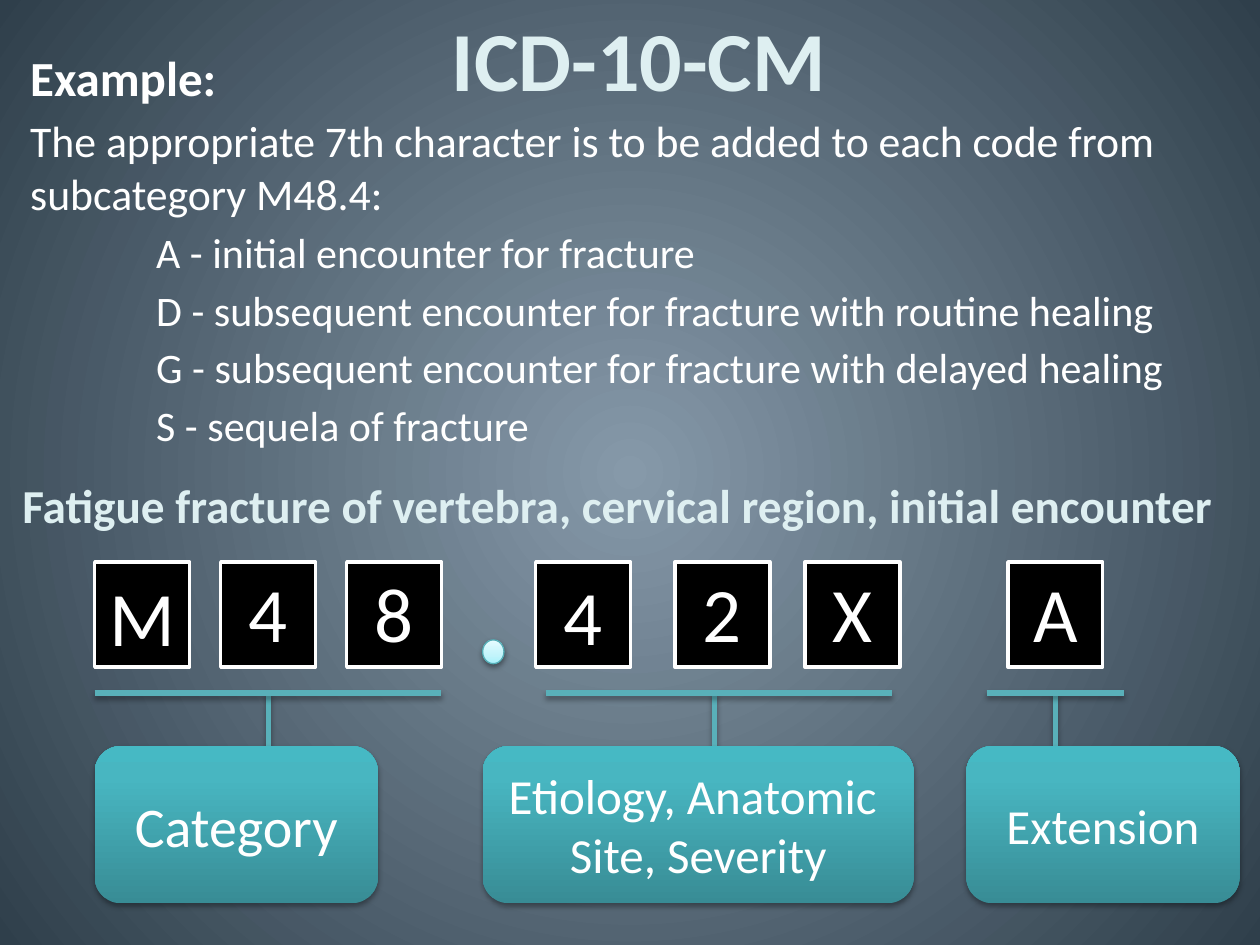
from lxml import etree
from pptx import Presentation
from pptx import util as u
from pptx.dml.color import RGBColor
from pptx.enum import shapes, text
from pptx.oxml import ns, parse_xml

Cm, Pt = u.Cm, u.Pt
WHITE, PALE, TEAL = "FFFFFF", "DEEFF1", "59B0B9"
KIND = shapes.MSO_SHAPE
MID = text.MSO_ANCHOR.MIDDLE
LOW = text.MSO_ANCHOR.BOTTOM
CENTER = text.PP_ALIGN.CENTER
UP = '<a:lin ang="16200000" scaled="0"/>'
ROUND = ('<a:path path="circle"><a:fillToRect l="50000" t="50000" '
         'r="50000" b="50000"/></a:path>')


def hue(code):
    return RGBColor.from_string(code)


def blend(props, stops, course):
    """Swap the solid fill in props for a gradient."""
    marks = "".join(f'<a:gs pos="{pos * 1000}"><a:srgbClr val="{code}"/></a:gs>'
                    for pos, code in stops)
    grad = parse_xml(f'<a:gradFill {ns.nsdecls("a")} rotWithShape="1">'
                     f'<a:gsLst>{marks}</a:gsLst>{course}</a:gradFill>')
    props.replace(props.find(ns.qn("a:solidFill")), grad)


def shade(item, alpha=35):
    """Give a shape or connector a soft shadow below it."""
    props = item.element.spPr
    fx = props.find(ns.qn("a:effectLst"))
    if fx is None:
        fx = etree.SubElement(props, ns.qn("a:effectLst"))
    fx.append(parse_xml(
        f'<a:outerShdw {ns.nsdecls("a")} blurRad="{Pt(3.1)}" dist="{Pt(1.8)}" '
        f'dir="5400000" rotWithShape="0"><a:srgbClr val="000000">'
        f'<a:alpha val="{alpha * 1000}"/></a:srgbClr></a:outerShdw>'))


def write(frame, words, size=24, color=WHITE, bold=False, align=None,
          anchor=None, gap=None, inset=0):
    """Add one paragraph, using the empty first one if there is one."""
    frame.word_wrap = True
    if anchor is not None:
        frame.vertical_anchor = anchor
    para = frame.paragraphs[-1]
    if para.runs:
        para = frame.add_paragraph()
    para.alignment = align
    if gap is not None:
        para.space_before = Pt(gap)
    if inset:
        props = para._p.get_or_add_pPr()
        props.set("marL", str(Cm(inset)))
        props.set("indent", "0")
    run = para.add_run()
    run.text = words
    font = run.font
    font.name, font.size, font.bold = "Calibri", Pt(size), bold
    font.color.rgb = hue(color)


def frame(slide, x, y, w, h):
    return slide.shapes.add_textbox(Cm(x), Cm(y), Cm(w), Cm(h)).text_frame


def block(slide, kind, x, y, w, h, fill, edge=None, width=1):
    item = slide.shapes.add_shape(kind, Cm(x), Cm(y), Cm(w), Cm(h))
    item.shadow.inherit = False
    item.fill.solid()
    item.fill.fore_color.rgb = hue(fill)
    if edge:
        item.line.color.rgb = hue(edge)
        item.line.width = Pt(width)
    else:
        item.line.fill.background()
    return item


def rule(slide, x, y, w, h):
    line = slide.shapes.add_connector(
        shapes.MSO_CONNECTOR.STRAIGHT, Cm(x), Cm(y), Cm(x + w), Cm(y + h))
    line.line.color.rgb = hue(TEAL)
    line.line.width = Pt(3)
    shade(line)


def tile(slide, x, y, char, drop):
    """One code character on a black square."""
    block(slide, KIND.RECTANGLE, x, y + 0.05, 1.91, 2.12, "000000", WHITE, 2)
    write(frame(slide, x, y + drop, 1.91, 2.13), char, size=44, align=CENTER)


def part(slide, x, y, w, lines, size, tiles, bar, stem):
    """A group of tiles, joined by a bar and stem to its label."""
    rule(slide, x + stem, y + 2.69, 0, 1.27)
    label = block(slide, KIND.ROUNDED_RECTANGLE, x, y + 3.76, w, 3.17, TEAL)
    blend(label.element.spPr,
          [(0, "388C95"), (80, "48B6C1"), (100, "46B9C4")], UP)
    shade(label)
    for line in lines:
        write(label.text_frame, line, size=size, align=CENTER, anchor=MID)
    for char, dx, drop in tiles:
        tile(slide, x + dx, y, char, drop)
    start, span = bar
    rule(slide, x + start, y + 2.69, span, 0)


def dot(slide, x, y):
    """The decimal point of the code."""
    item = block(slide, KIND.FLOWCHART_CONNECTOR, x, y, 0.43, 0.48,
                 PALE, "55AEB7", 0.75)
    blend(item.element.spPr,
          [(0, "A8F1FB"), (35, "C2F4FB"), (100, "E7FCFF")], UP)
    shade(item, 38)


def code(slide, y):
    """The code split into its three parts."""
    part(slide, 1.91, y, 5.71, ["Category"], 32,
         [("M", 0, 0.08), ("4", 2.54, 0), ("8", 5.08, 0)], (0, 6.98), 3.5)
    part(slide, 9.73, y, 8.69, ["Etiology, Anatomic ", "Site, Severity"], 28,
         [("4", 1.07, 0.05), ("2", 3.88, 0), ("X", 6.5, 0)],
         (1.27, 6.98), 4.67)
    part(slide, 19.48, y, 5.51, ["Extension"], 28,
         [("A", 0.84, 0)], (0.41, 2.77), 1.8)
    dot(slide, 9.73, y + 1.62)


def rules(slide, x, y, w, h):
    """The coding rule and its list of characters."""
    body = frame(slide, x, y, w, h)
    write(body, "Example:", size=28, bold=True, gap=4.2)
    write(body, "The appropriate 7th character is to be added to each code "
                "from subcategory M48.4:", size=25, gap=4.2)
    for line in ("A - initial encounter for fracture",
                 "D - subsequent encounter for fracture with routine healing",
                 "G - subsequent encounter for fracture with delayed healing",
                 "S - sequela of fracture"):
        write(body, line, gap=4.2, inset=2.54)


def head(slide, x, y, w, words, size):
    write(frame(slide, x, y, w, 1.78), words, size=size, color=PALE,
          bold=True, anchor=LOW, gap=4.2)


def main():
    deck = Presentation()
    deck.slide_width, deck.slide_height = Cm(25.4), Cm(19.05)
    slide = deck.slides.add_slide(deck.slide_layouts[6])

    # Background
    slide.background.fill.solid()
    blend(slide.element.xpath(".//p:bgPr")[0],
          [(0, "8699A9"), (100, "2F3F4B")], ROUND)

    # Code diagram, then the text above it
    code(slide, 11.28)
    head(slide, 0.2, 9.09, 24.56, "Fatigue fracture of vertebra, cervical "
         "region, initial encounter", 27)
    rules(slide, 0.36, 0.84, 24.97, 10.97)
    head(slide, 8.86, 0.53, 11.23, "ICD-10-CM", 48)
    deck.save("out.pptx")


if __name__ == "__main__":
    main()
